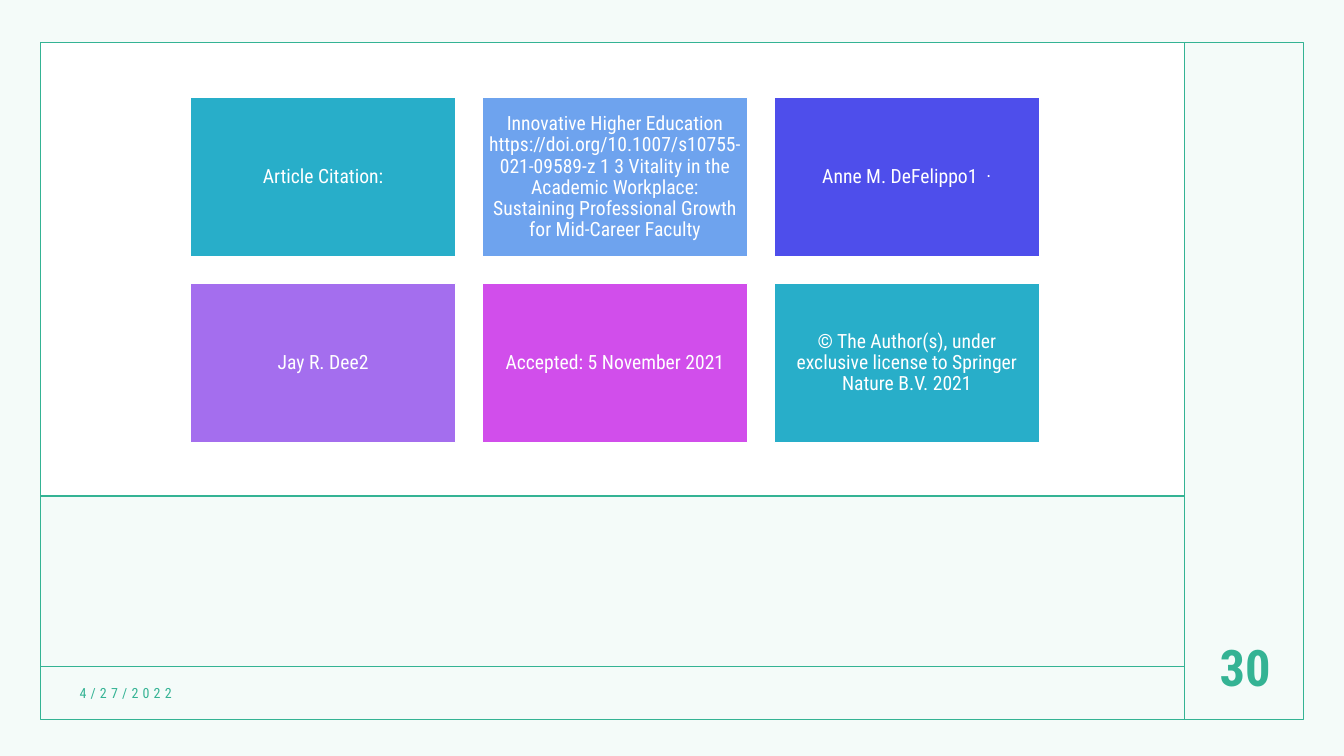
from lxml import etree
from pptx import Presentation
from pptx.dml.color import RGBColor
from pptx.enum import shapes, text
from pptx.oxml import ns
from pptx.util import Inches, Pt

FONT = "Roboto Condensed"
COLORS = {
    "white": "FFFFFF",
    "green": "34B394",
    "teal": "28AEC9",
    "sky": "6EA3EE",
    "indigo": "4E4EEB",
    "violet": "A46EEE",
    "magenta": "D14EEB",
}

CARDS = [
    ("Article Citation:", "teal"),
    ("Innovative Higher Education https://doi.org/10.1007/s10755-021-09589-z "
     "1 3 Vitality in the Academic Workplace: Sustaining Professional Growth "
     "for Mid-Career Faculty", "sky"),
    ("Anne M. DeFelippo1  ·", "indigo"),
    ("Jay R. Dee2", "violet"),
    ("Accepted: 5 November 2021", "magenta"),
    ("© The Author(s), under exclusive license to Springer Nature B.V. 2021", "teal"),
]
COLUMNS = 3
CARD_LEFT, CARD_TOP = 1.89, 0.97
CARD_WIDTH, CARD_HEIGHT = 2.63, 1.58
STEP_X, STEP_Y = 2.895, 1.84

SLIDE = (0, 0, 13.33, 7.5)
PANEL = (0.4, 0.42, 11.35, 4.5)
FRAME = (0.4, 0.42, 12.53, 6.72)
RULES = [
    (11.75, 0.42, 11.75, 7.13),
    (0.41, 4.92, 11.75, 4.92),
    (0.41, 6.61, 11.75, 6.61),
]
# text, place, alignment, font values, letter spacing in points
LABELS = [
    ("4/27/2022", (0.69, 6.72, 3.45, 0.31), text.PP_ALIGN.LEFT,
     {"size": Pt(10)}, 3),
    ("30", (11.83, 6.2, 1.04, 0.83), text.PP_ALIGN.CENTER,
     {"size": Pt(36), "bold": True}, 0),
]


def color(name):
    return RGBColor.from_string(COLORS[name])


def add_rectangle(page, place, fill=None, line=None):
    box = page.shapes.add_shape(shapes.MSO_SHAPE.RECTANGLE, *map(Inches, place))
    box.shadow.inherit = False
    if fill:
        box.fill.solid()
        box.fill.fore_color.rgb = color(fill)
    else:
        box.fill.background()
    if line:
        box.line.color.rgb = color(line)
        box.line.width = Pt(1)
    else:
        box.line.fill.background()
    return box


def make_transparent(box, percent):
    """Set the opacity of a solid fill."""
    fill_color = box._element.spPr.find(ns.qn("a:solidFill"))[0]
    etree.SubElement(fill_color, ns.qn("a:alpha"), val=str(percent * 1000))


def add_rule(page, ends):
    rule = page.shapes.add_connector(shapes.MSO_CONNECTOR.STRAIGHT, *map(Inches, ends))
    rule.line.color.rgb = color("green")
    rule.line.width = Pt(1)
    etree.SubElement(rule._element.spPr, ns.qn("a:effectLst"))


def write(box, words, ink, align, font_values, paragraph_values):
    frame = box.text_frame
    frame.word_wrap = True
    frame.vertical_anchor = text.MSO_ANCHOR.MIDDLE
    para = frame.paragraphs[0]
    para.alignment = align
    for name, value in paragraph_values.items():
        setattr(para, name, value)
    span = para.add_run()
    span.text = words
    for name, value in {"name": FONT, **font_values}.items():
        setattr(span.font, name, value)
    span.font.color.rgb = color(ink)
    return span


def add_card(page, index, words, fill):
    row, column = divmod(index, COLUMNS)
    place = (CARD_LEFT + column * STEP_X, CARD_TOP + row * STEP_Y,
             CARD_WIDTH, CARD_HEIGHT)
    card = add_rectangle(page, place, fill, "white")
    for side in ("left", "right", "top", "bottom"):
        setattr(card.text_frame, f"margin_{side}", Inches(0.06))
    write(card, words, "white", text.PP_ALIGN.CENTER, {"size": Pt(14)},
          {"line_spacing": 0.9, "space_after": Pt(5)})


def main():
    deck = Presentation()
    deck.slide_width, deck.slide_height = map(Inches, SLIDE[2:])
    page = deck.slides.add_slide(deck.slide_layouts[6])

    add_rectangle(page, SLIDE, "white")
    make_transparent(add_rectangle(page, SLIDE, "green"), 5)
    add_rectangle(page, PANEL, "white")
    add_rectangle(page, FRAME, line="green")
    for ends in RULES:
        add_rule(page, ends)

    for words, place, align, font_values, spacing in LABELS:
        box = page.shapes.add_textbox(*map(Inches, place))
        span = write(box, words, "green", align, font_values, {"space_after": Pt(6)})
        if spacing:
            span.font._element.set("spc", str(spacing * 100))

    for index, (words, fill) in enumerate(CARDS):
        add_card(page, index, words, fill)

    deck.save("out.pptx")


if __name__ == "__main__":
    main()
